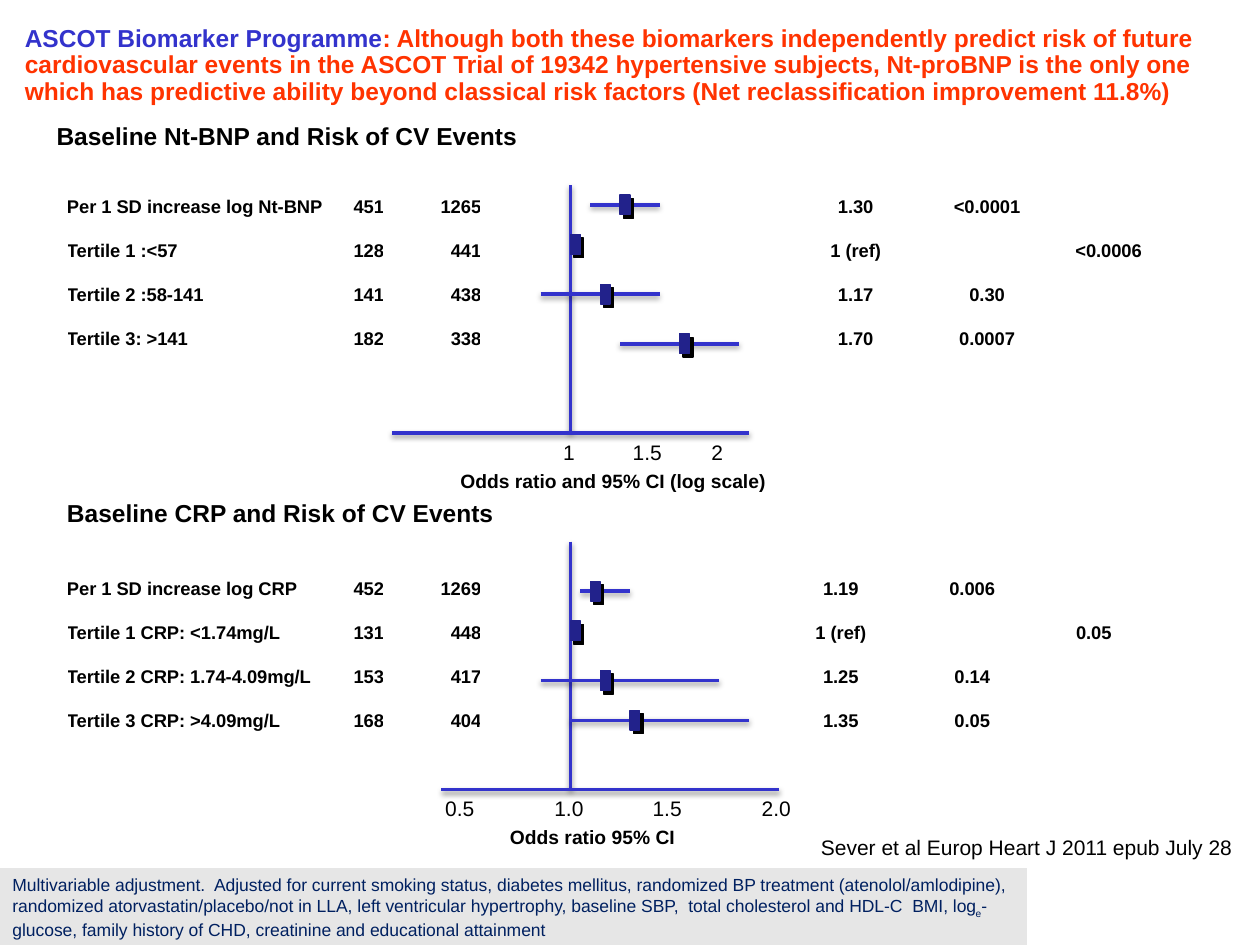
import pptx
import pptx.util
import pptx.dml.color
import pptx.enum.shapes
import pptx.enum.text
import pptx.oxml
import pptx.oxml.ns
from pptx.util import Cm, Pt

RGBColor = pptx.dml.color.RGBColor
BLUE = RGBColor(0x33, 0x33, 0xCC)
ORANGE = RGBColor(0xFF, 0x33, 0x00)
BLACK = RGBColor(0, 0, 0)
MARKER_NAVY = RGBColor(0x22, 0x22, 0x8B)
NOTE_NAVY = RGBColor(0x00, 0x20, 0x60)
NOTE_GREY = RGBColor(0xE6, 0xE6, 0xE6)
LEFT, CENTER, RIGHT = (pptx.enum.text.PP_ALIGN.LEFT, pptx.enum.text.PP_ALIGN.CENTER,
                       pptx.enum.text.PP_ALIGN.RIGHT)
RECTANGLE = pptx.enum.shapes.MSO_SHAPE.RECTANGLE
MIDDLE = pptx.enum.text.MSO_ANCHOR.MIDDLE

TITLE = [
    ("ASCOT Biomarker Programme", BLUE),
    (": Although both these biomarkers independently predict risk of future "
     "cardiovascular events in the ASCOT Trial of 19342 hypertensive subjects, "
     "Nt-proBNP is the only one which has predictive ability beyond classical "
     "risk factors (Net reclassification improvement 11.8%)", ORANGE),
]
NOTE = [
    ("Multivariable adjustment.  Adjusted for current smoking status, diabetes "
     "mellitus, randomized BP treatment (atenolol/amlodipine), randomized "
     "atorvastatin/placebo/not in LLA, left ventricular hypertrophy, baseline "
     "SBP,  total cholesterol and HDL-C  BMI, log", None),
    ("e", "-25000"),
    ("-glucose, family history of CHD, creatinine and educational attainment", None),
]
SOURCE = "Sever et al Europ Heart J 2011 epub July 28"

# Lengths in cm. Row: label, two counts, space for the plot, odds ratio, p, trend p.
# Mark: marker left, marker top above the axis, interval ends.
STUDIES = [
    {
        "heading": ("Baseline Nt-BNP and Risk of CV Events", 0.89, 2.32),
        "rows": [
            ("Per 1 SD increase log Nt-BNP", "451", "1265", "", "1.30", "<0.0001", ""),
            ("Tertile 1 :<57", "128", "441", "", "1 (ref)", "", "<0.0006"),
            ("Tertile 2 :58-141", "141", "438", "", "1.17", "0.30", ""),
            ("Tertile 3: >141", "182", "338", "", "1.70", "0.0007", ""),
        ],
        "rows_top": 3.73,
        "plot_space": 6.15,
        "axis": (7.9, 15.1, 8.73),
        "ticks": [("1", 11.47), ("1.5", 13.05), ("2", 14.46)],
        "caption": ("Odds ratio and 95% CI (log scale)", 7.5),
        "marks": [(12.5, 4.8, (11.9, 13.3)), (11.5, 4.0, None),
                  (12.1, 3.0, (10.9, 13.3)), (13.7, 2.0, (12.5, 14.9))],
    },
    {
        "heading": ("Baseline CRP and Risk of CV Events", 1.1, 9.92),
        "rows": [
            ("Per 1 SD increase log CRP", "452", "1269", "", "1.19", "0.006", ""),
            ("Tertile 1 CRP: <1.74mg/L", "131", "448", "", "1 (ref)", "", "0.05"),
            ("Tertile 2 CRP: 1.74-4.09mg/L", "153", "417", "", "1.25", "0.14", ""),
            ("Tertile 3 CRP: >4.09mg/L", "168", "404", "", "1.35", "0.05", ""),
        ],
        "rows_top": 11.43,
        "plot_space": 5.85,
        "axis": (8.9, 15.7, 15.92),
        "ticks": [("0.5", 9.27), ("1.0", 11.47), ("1.5", 13.45), ("2.0", 15.65)],
        "caption": ("Odds ratio 95% CI", 8.5),
        "marks": [(11.9, 4.2, (11.7, 12.7)), (11.5, 3.4, None),
                  (12.1, 2.4, (10.9, 14.5)), (12.7, 1.6, (11.5, 15.1))],
    },
]
ROWS_LEFT, ROW_HEIGHT = 1.35, 0.89
COLUMN_ALIGNMENTS = [LEFT, RIGHT, RIGHT, CENTER, CENTER, CENTER, CENTER]
REFERENCE_X, REFERENCE_HEIGHT = 11.5, 5
MARKER_WIDTH, MARKER_HEIGHT = 0.2, 0.4
TICK_WIDTH = 1.3


def set_font(font, size, color=BLACK, bold=False):
    font.name, font.size, font.bold = "Arial", Pt(size), bold
    font.color.rgb = color


def prepare_frame(shape):
    frame = shape.text_frame
    frame.word_wrap = True
    frame.auto_size = pptx.enum.text.MSO_AUTO_SIZE.NONE
    frame.vertical_anchor = pptx.enum.text.MSO_ANCHOR.TOP
    return frame


def add_label(slide, text, box, size, bold=False, align=LEFT):
    frame = prepare_frame(slide.shapes.add_textbox(*map(Cm, box)))
    paragraph = frame.paragraphs[0]
    paragraph.text, paragraph.alignment = text, align
    set_font(paragraph.font, size, bold=bold)
    return frame


def add_shadow(shape, blur, distance, angle, alpha):
    """Blur and distance in points, angle in degrees, alpha in percent."""
    shape._element.spPr.append(pptx.oxml.parse_xml(
        f'<a:effectLst {pptx.oxml.ns.nsdecls("a")}>'
        f'<a:outerShdw blurRad="{Pt(blur)}" dist="{Pt(distance)}" '
        f'dir="{angle * 60000}" algn="ctr" rotWithShape="0">'
        f'<a:srgbClr val="000000"><a:alpha val="{alpha * 1000}"/></a:srgbClr>'
        '</a:outerShdw></a:effectLst>'))


def add_line(slide, x1, y1, x2, y2):
    line = slide.shapes.add_connector(
        pptx.enum.shapes.MSO_CONNECTOR.STRAIGHT, *map(Cm, (x1, y1, x2, y2)))
    line.line.color.rgb, line.line.width = BLUE, Pt(2)
    add_shadow(line, 3.1, 1.6, 90, 38)


def add_marker(slide, left, top):
    marker = slide.shapes.add_shape(
        RECTANGLE, *map(Cm, (left, top, MARKER_WIDTH, MARKER_HEIGHT)))
    marker.fill.solid()
    marker.fill.fore_color.rgb = marker.line.color.rgb = MARKER_NAVY
    marker.line.width = Pt(0.75)
    add_shadow(marker, 0, 2.8, 45, 100)


def add_rows(slide, study):
    rows = study["rows"]
    widths = [5.3, 1.09, 1.96, study["plot_space"], 2.8, 2.5, 2.4]
    table = slide.shapes.add_table(
        len(rows), len(widths), Cm(ROWS_LEFT), Cm(study["rows_top"]),
        Cm(sum(widths)), Cm(ROW_HEIGHT * len(rows))).table
    table.first_row = table.horz_banding = False
    for column, width in zip(table.columns, widths):
        column.width = Cm(width)
    for table_row, row in zip(table.rows, rows):
        table_row.height = Cm(ROW_HEIGHT)
        for cell, text, align in zip(table_row.cells, row, COLUMN_ALIGNMENTS):
            cell.fill.background()
            cell.margin_left = cell.margin_right = 0
            cell.margin_top = cell.margin_bottom = 0
            cell.vertical_anchor = MIDDLE
            paragraph = cell.text_frame.paragraphs[0]
            paragraph.text, paragraph.alignment = text, align
            set_font(paragraph.font, 10.5, bold=True)


def add_forest_plot(slide, study):
    start, end, axis_y = study["axis"]
    add_line(slide, REFERENCE_X, axis_y - REFERENCE_HEIGHT, REFERENCE_X, axis_y)
    add_line(slide, start, axis_y, end, axis_y)
    for text, center in study["ticks"]:
        add_label(slide, text, (center - TICK_WIDTH / 2, axis_y, TICK_WIDTH, 0.76),
                  12, align=CENTER)
    caption, left = study["caption"]
    frame = add_label(slide, caption, (left, axis_y + 0.6, 9.8, 0.74), 11, bold=True)
    frame.margin_left = Cm(1.78)
    for left, rise, interval in study["marks"]:
        top = axis_y - rise
        if interval:
            middle = top + MARKER_HEIGHT / 2
            add_line(slide, interval[0], middle, interval[1], middle)
        add_marker(slide, left, top)


def fill_title(title):
    title.left, title.top, title.width, title.height = map(Cm, (0.5, 0.53, 24.2, 1.17))
    frame = prepare_frame(title)
    frame.margin_left = frame.margin_top = frame.margin_right = frame.margin_bottom = 0
    paragraph = frame.paragraphs[0]
    paragraph.alignment, paragraph.line_spacing = LEFT, 0.9
    for text, color in TITLE:
        run = paragraph.add_run()
        run.text = text
        set_font(run.font, 14, color, bold=True)


def add_note(slide):
    note = slide.shapes.add_shape(RECTANGLE, *map(Cm, (0, 17.5, 20.7, 1.55)))
    note.shadow.inherit = False
    note.fill.solid()
    note.fill.fore_color.rgb = NOTE_GREY
    note.line.fill.background()
    paragraph = prepare_frame(note).paragraphs[0]
    paragraph.alignment = LEFT
    for text, baseline in NOTE:
        run = paragraph.add_run()
        run.text = text
        set_font(run.font, 10, NOTE_NAVY)
        if baseline:
            run.font._element.set("baseline", baseline)


def main():
    deck = pptx.Presentation()
    deck.slide_width, deck.slide_height = Cm(25.4), Cm(19.05)
    slide = deck.slides.add_slide(deck.slide_layouts[5])
    fill_title(slide.shapes.title)
    for study in STUDIES:
        heading, left, top = study["heading"]
        add_label(slide, heading, (left, top, 11.4, 0.85), 14, bold=True)
        add_rows(slide, study)
        add_forest_plot(slide, study)
    add_note(slide)
    add_label(slide, SOURCE, (16.3, 16.7, 9.1, 0.76), 12)
    deck.save("out.pptx")


if __name__ == "__main__":
    main()
